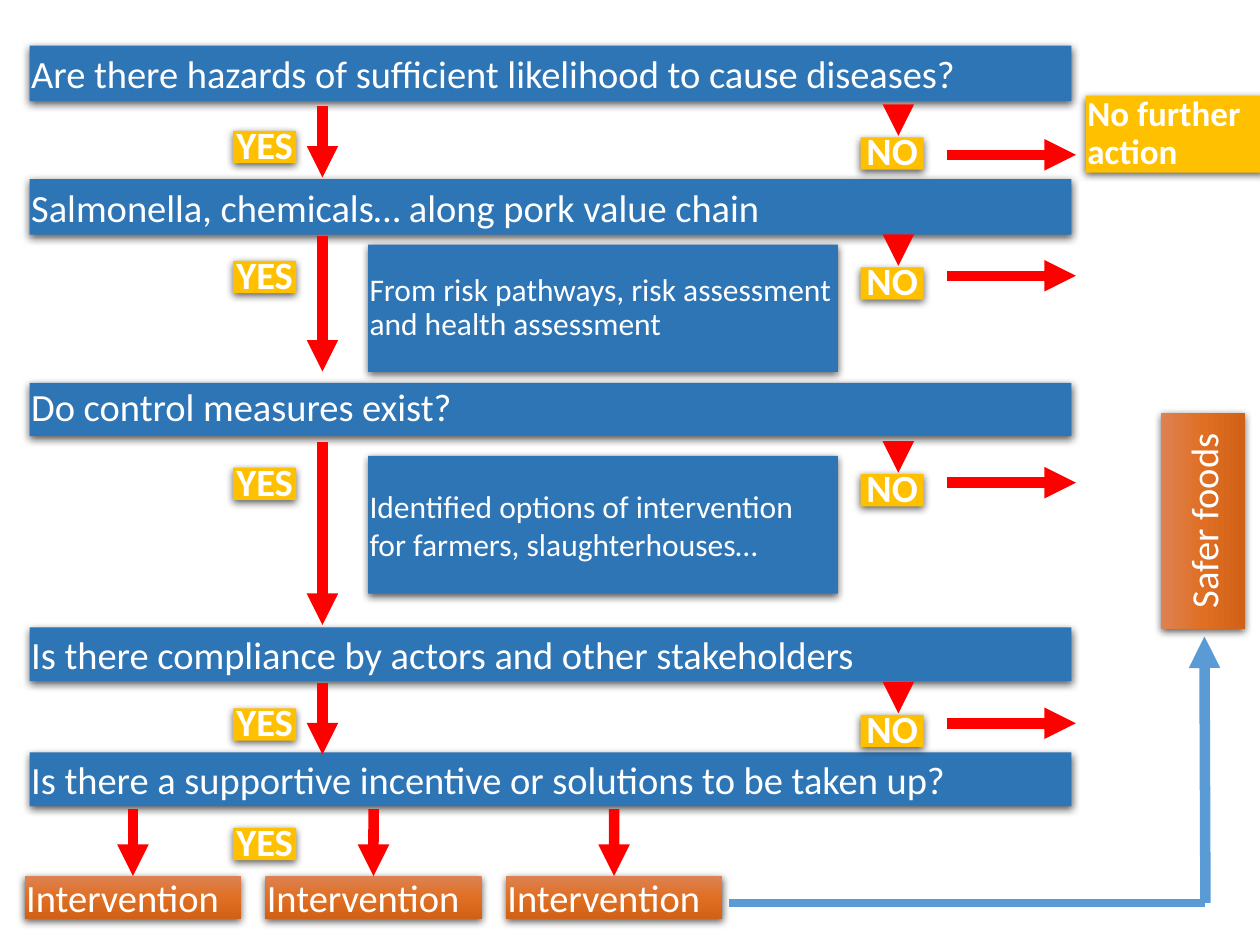
"""Build the food safety decision flowchart slide."""
from lxml.etree import SubElement
from pptx import Presentation
from pptx.dml.color import RGBColor
from pptx.enum.shapes import MSO_CONNECTOR as Link, MSO_SHAPE as Preset
from pptx.enum.text import MSO_ANCHOR as Anchor, PP_ALIGN as Align
from pptx.oxml.ns import qn
from pptx.util import Cm, Pt

BLUE = RGBColor(0x2E, 0x75, 0xB6)
AMBER = RGBColor(0xFF, 0xC0, 0x00)
RED = RGBColor(0xFF, 0x00, 0x00)
SKY = RGBColor(0x5B, 0x9B, 0xD5)
WHITE = RGBColor(0xFF, 0xFF, 0xFF)
ORANGES = {
    0: RGBColor(0xDD, 0x82, 0x54),
    50000: RGBColor(0xE0, 0x6F, 0x23),
    100000: RGBColor(0xD0, 0x61, 0x16),
}
FRAME_FORMAT = {
    "word_wrap": True,
    "vertical_anchor": Anchor.MIDDLE,
    "margin_left": Cm(0.03),
    "margin_top": Cm(0.03),
    "margin_right": Cm(0.03),
    "margin_bottom": Cm(0.03),
}
SHADOW_FORMAT = {"blurRad": "57150", "dist": "19050", "dir": "5400000", "algn": "ctr", "rotWithShape": "0"}


def add_box(text, place, color=None, size=22, bold=False, align=Align.LEFT, tight=False):
    box = slide.shapes.add_shape(Preset.RECTANGLE, *[Cm(value) for value in place])
    if color is None:
        box.fill.gradient()
        box.fill.gradient_angle = 270
        stops = box._element.spPr.find(".//" + qn("a:gsLst"))
        stops.clear()
        for position, shade in ORANGES.items():
            stop = SubElement(stops, qn("a:gs"), pos=str(position))
            SubElement(stop, qn("a:srgbClr"), val=str(shade))
    else:
        box.fill.solid()
        box.fill.fore_color.rgb = color
    box.line.fill.background()
    box.shadow.inherit = False
    effects = box._element.spPr.find(qn("a:effectLst"))
    shadow = SubElement(effects, qn("a:outerShdw"), SHADOW_FORMAT)
    tint = SubElement(shadow, qn("a:srgbClr"), val="000000")
    SubElement(tint, qn("a:alpha"), val="63000")
    for name, value in FRAME_FORMAT.items():
        setattr(box.text_frame, name, value)
    para = box.text_frame.paragraphs[0]
    para.alignment = align
    if tight:
        para.line_spacing = 0.9
        after = SubElement(para._p.get_or_add_pPr(), qn("a:spcAft"))
        SubElement(after, qn("a:spcPct"), val="35000")
    span = para.add_run()
    span.text = text
    span.font.color.rgb = WHITE
    for name, value in {"name": "Calibri", "size": Pt(size), "bold": bold}.items():
        setattr(span.font, name, value)
    return box


def add_line(start, end, color=RED, width=6, arrow=True):
    line = slide.shapes.add_connector(Link.STRAIGHT, *[Cm(value) for value in (*start, *end)])
    line.line.color.rgb = color
    line.line.width = Pt(width)
    if arrow:
        SubElement(line.line._get_or_add_ln(), qn("a:tailEnd"), type="triangle")
    SubElement(line._element.spPr, qn("a:effectLst"))
    return line


deck = Presentation()
deck.slide_width, deck.slide_height = Cm(25.4), Cm(19.05)
slide = deck.slides.add_slide(deck.slide_layouts[6])

questions = [
    ("Are there hazards of sufficient likelihood to cause diseases?", 0.92, 1.12, False),
    ("Salmonella, chemicals… along pork value chain", 3.61, 1.12, False),
    ("Do control measures exist?", 7.72, 1.07, True),
    ("Is there compliance by actors and other stakeholders", 12.65, 1.08, False),
    ("Is there a supportive incentive or solutions to be taken up?", 15.17, 1.08, False),
]
for text, top, height, tight in questions:
    add_box(text, (0.6, top, 21, height), BLUE, tight=tight)

notes = [
    ("From risk pathways, risk assessment and health assessment", 4.93, 2.57, True),
    ("Identified options of intervention for farmers, slaughterhouses…", 9.19, 2.78, False),
]
for text, top, height, tight in notes:
    add_box(text, (7.42, top, 9.47, height), BLUE, size=18, tight=tight)

add_box("No further action", (21.89, 1.93, 3.61, 1.55), AMBER, size=20, bold=True, tight=True)

answer = {"color": AMBER, "bold": True, "align": Align.CENTER, "tight": True}
branches = [(2.64, 3.58, 3.12), (5.26, 7.49, 5.56), (9.43, 12.6, 9.73), (14.28, 15.21, 14.58)]
for top, yes_end, exit_level in branches:
    add_box("YES", (4.7, top, 1.27, 0.65), **answer)
    add_box("NO", (17.35, top + 0.13, 1.27, 0.65), **answer)
    add_line((6.5, top - 0.51), (6.5, yes_end))
    add_line((18.11, top - 0.43), (18.11, top + 0.1))
    add_line((19.1, exit_level), (21.69, exit_level))
add_box("YES", (4.7, 16.69, 1.27, 0.65), **answer)

for column in range(3):
    left = 0.5 + 4.85 * column
    intervention = add_box("Intervention", (left, 17.66, 4.36, 0.86))
    center = left + 2.18
    arrow = add_line((center, 16.31), (center, 17.66))
    arrow.end_connect(intervention, 0)

outcome = add_box("Safer foods", (22.07, 9.66, 4.36, 1.68), align=Align.CENTER)
outcome.rotation = 270
add_line((14.7, 18.2), (24.3, 18.2), SKY, 4.5, arrow=False)
add_line((24.3, 18.2), (24.28, 12.83), SKY)

deck.save("out.pptx")
